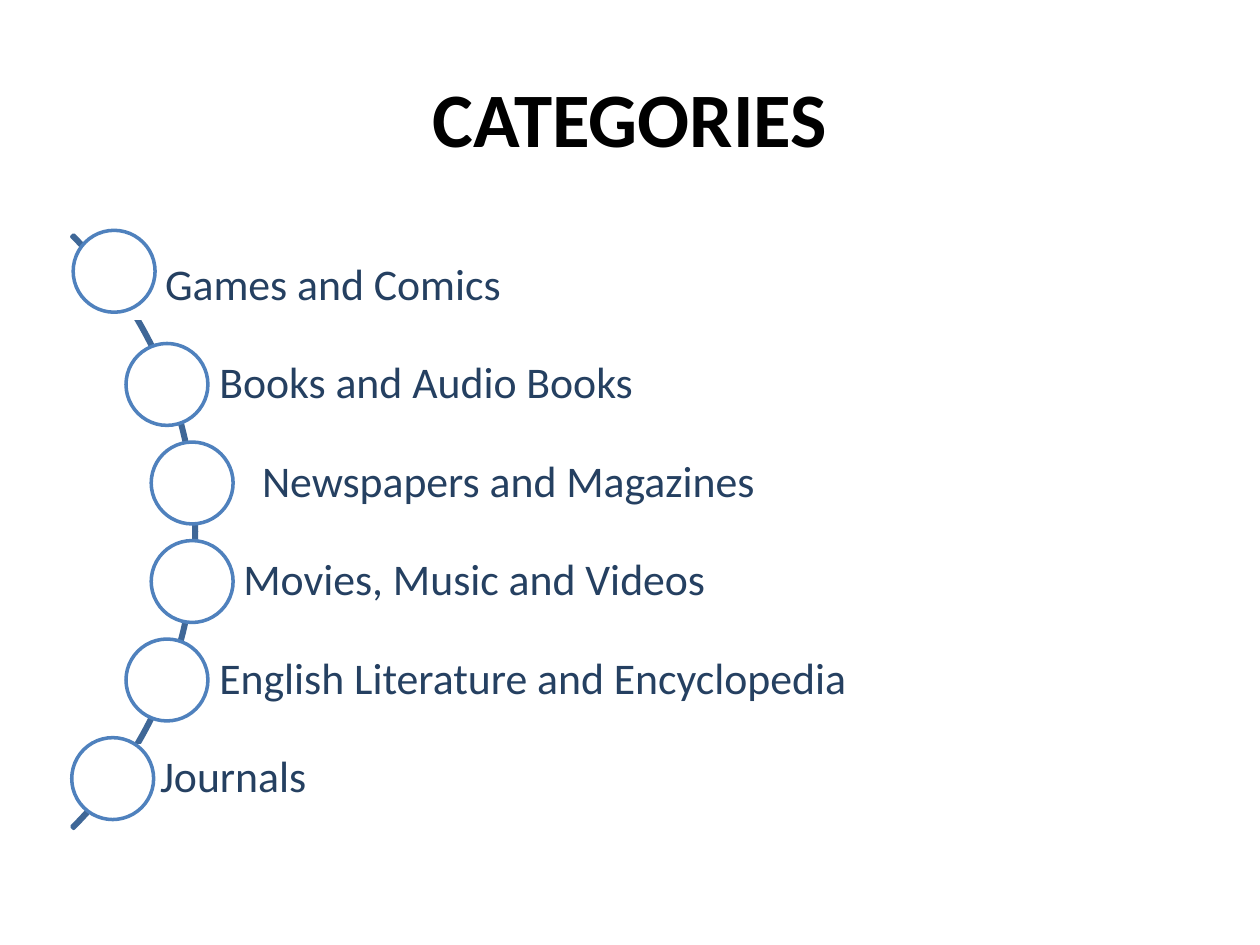
from pptx import Presentation
from pptx.dml.color import RGBColor
from pptx.enum.shapes import MSO_SHAPE
from pptx.enum.text import MSO_ANCHOR, PP_ALIGN
from pptx.util import Pt

TITLE = "CATEGORIES"
# label, circle left, bar left, bar width, circle offset from the middle of the bar
CATEGORIES = [
    ("Games and Comics", 41.8, 64.8, 614.2, -8.4),
    ("Books and Audio Books", 72, 95.8, 583.2, 0),
    ("Newspapers and Magazines", 86.4, 120.2, 559, 0),
    ("Movies, Music and Videos", 86.4, 109.5, 569.5, 0),
    ("English Literature and Encyclopedia", 72, 95.8, 583.2, 0),
    ("Journals", 41, 61.9, 614.2, 0),
]
FIRST_TOP, ROW_PITCH = 144.7, 56.3
BAR_HEIGHT, CIRCLE_SIZE = 37.4, 46.8
ARC_LEFT, ARC_TOP, ARC_SIZE = -367.2, 64.1, 479.5
WHITE, BLACK, NAVY = "FFFFFF", "000000", "254061"
ARC_BLUE, CIRCLE_BLUE = "3F6797", "4F81BD"


def color(code):
    return RGBColor.from_string(code)


def add_outlined(shapes, kind, left, top, width, height, line, fill=None):
    shape = shapes.add_shape(kind, Pt(left), Pt(top), Pt(width), Pt(height))
    shape.shadow.inherit = False
    if fill:
        shape.fill.solid()
        shape.fill.fore_color.rgb = color(fill)
    else:
        shape.fill.background()
    shape.line.color.rgb = color(line)
    shape.line.width = Pt(2)
    return shape


def write(frame, text, size, code, align, bold=False):
    frame.text = text
    frame.word_wrap = True
    frame.vertical_anchor = MSO_ANCHOR.MIDDLE
    para = frame.paragraphs[0]
    para.alignment = align
    font = para.runs[0].font
    font.name, font.size, font.bold = "Calibri", Pt(size), bold
    font.color.rgb = color(code)
    return para


def main():
    deck = Presentation()
    deck.slide_width, deck.slide_height = Pt(720), Pt(540)
    slide = deck.slides.add_slide(deck.slide_layouts[5])

    title = slide.shapes.title
    title.left, title.top, title.width, title.height = Pt(36), Pt(21.6), Pt(648), Pt(90)
    write(title.text_frame, TITLE, 44, BLACK, PP_ALIGN.CENTER, bold=True)

    diagram = slide.shapes.add_group_shape().shapes
    arc = add_outlined(diagram, MSO_SHAPE.BLOCK_ARC, ARC_LEFT, ARC_TOP,
                       ARC_SIZE, ARC_SIZE, ARC_BLUE)
    for index, value in enumerate((189, 27, 0.003)):
        arc.adjustments[index] = value

    for row, (label, circle_left, bar_left, bar_width, offset) in enumerate(CATEGORIES):
        top = FIRST_TOP + row * ROW_PITCH
        bar = add_outlined(diagram, MSO_SHAPE.RECTANGLE, bar_left, top,
                           bar_width, BAR_HEIGHT, WHITE, WHITE)
        frame = bar.text_frame
        frame.margin_left = Pt(29.6)
        frame.margin_top = frame.margin_right = frame.margin_bottom = Pt(5)
        para = write(frame, label, 25, NAVY, PP_ALIGN.LEFT)
        para.line_spacing = 0.9

        circle_top = top + (BAR_HEIGHT - CIRCLE_SIZE) / 2 + offset
        add_outlined(diagram, MSO_SHAPE.OVAL, circle_left, circle_top,
                     CIRCLE_SIZE, CIRCLE_SIZE, CIRCLE_BLUE, WHITE)

    deck.save("out.pptx")


if __name__ == "__main__":
    main()
